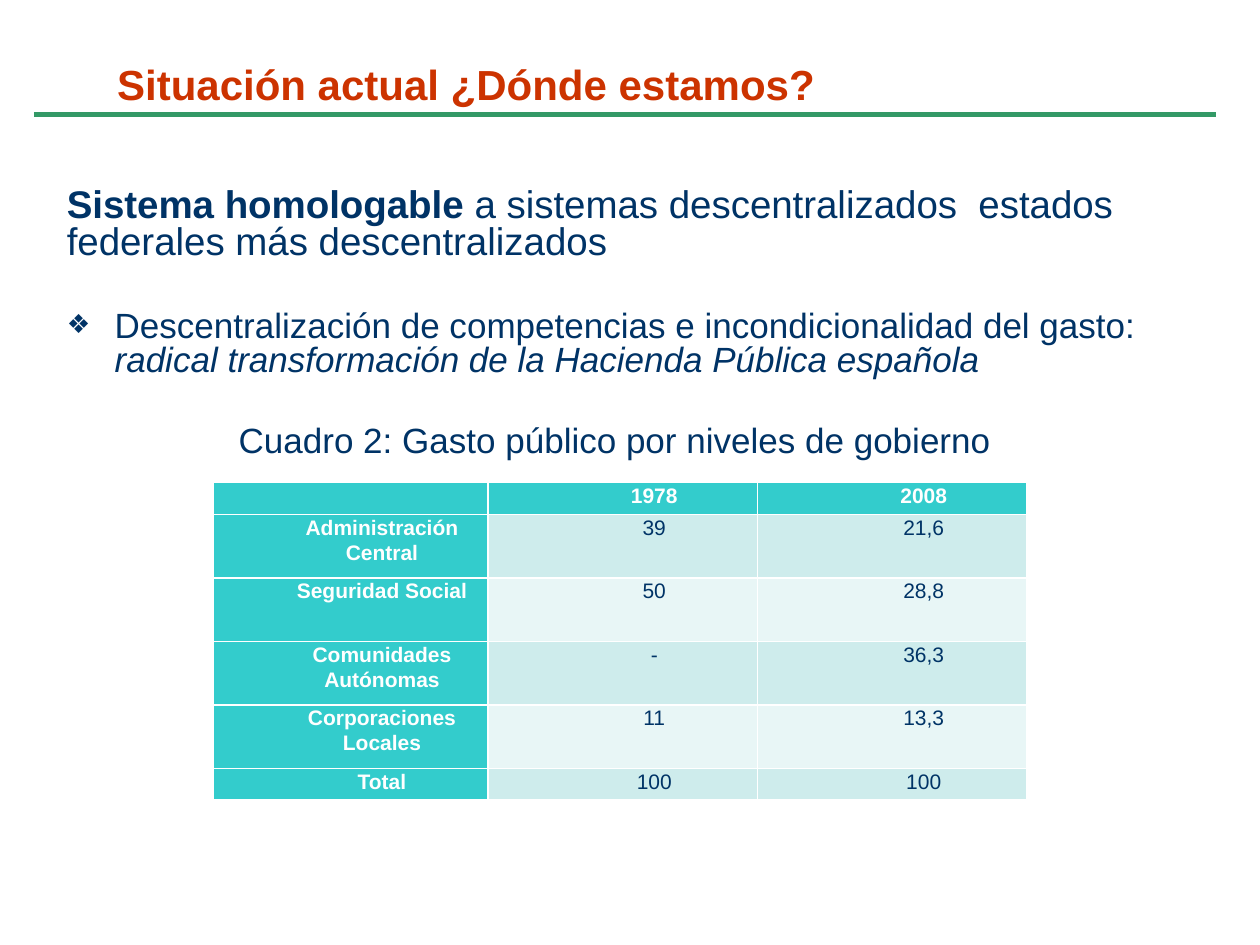
from dataclasses import dataclass

from lxml import etree
from pptx import Presentation
from pptx import util as u
from pptx.dml.color import RGBColor
from pptx.enum import text
from pptx.oxml.ns import qn


@dataclass(frozen=True)
class Theme:
    font: str = "Arial"
    title: str = "CC3300"
    ink: str = "003366"
    rule: str = "339966"
    header: str = "33CCCC"
    bands: tuple = ("CEECEC", "E8F6F6")
    white: str = "FFFFFF"
    title_size: int = 24
    lead_size: int = 22
    body_size: int = 20
    table_size: int = 12


THEME = Theme()

LEAD = [("Sistema homologable ", "bold"),
        ("a sistemas descentralizados  estados federales más descentralizados", "")]
POINT = [("Descentralización de competencias e incondicionalidad del gasto: ", ""),
         ("radical transformación de la Hacienda Pública española", "italic")]
CAPTION = [("Cuadro 2: Gasto público por niveles de gobierno", "")]

SPENDING = [
    ("", "1978", "2008"),
    ("Administración Central", "39", "21,6"),
    ("Seguridad Social", "50", "28,8"),
    ("Comunidades Autónomas", "-", "36,3"),
    ("Corporaciones Locales", "11", "13,3"),
    ("Total", "100", "100"),
]


def inches(*lengths):
    return [u.Inches(length) for length in lengths]


def place(shape, box):
    shape.left, shape.top, shape.width, shape.height = inches(*box)


def style(span, size, color, bold=False, italic=False):
    font = span.font
    font.name, font.size = THEME.font, u.Pt(size)
    font.bold, font.italic = bold, italic
    font.color.rgb = RGBColor.from_string(color)


def indent(para, left, first=0):
    properties = para._p.get_or_add_pPr()
    properties.set("marL", str(u.Inches(left)))
    properties.set("indent", str(u.Inches(first)))
    return properties


def set_bullet(para, mark):
    """Give the paragraph a bullet mark, or none when mark is empty."""
    properties = indent(para, 0.38, -0.38) if mark else indent(para, 0)
    if not mark:
        etree.SubElement(properties, qn("a:buNone"))
        return
    color = etree.SubElement(properties, qn("a:buClr"))
    etree.SubElement(color, qn("a:srgbClr"), val=THEME.ink)
    etree.SubElement(properties, qn("a:buSzPct"), val="75000")
    etree.SubElement(properties, qn("a:buChar"), char=mark)


def add_title(page, box):
    title = page.shapes.title
    place(title, box)
    frame = title.text_frame
    frame.text = "Situación actual ¿Dónde estamos?"
    frame.vertical_anchor = text.MSO_ANCHOR.BOTTOM
    frame.auto_size = text.MSO_AUTO_SIZE.NONE
    para = frame.paragraphs[0]
    para.alignment = text.PP_ALIGN.LEFT
    para.line_spacing = 0.9
    style(para.runs[0], THEME.title_size, THEME.title, bold=True)


def add_rule(page, left, right, y):
    rule = page.shapes.add_connector(1, *inches(left, y, right, y))
    rule.line.color.rgb = RGBColor.from_string(THEME.rule)
    rule.line.width = u.Pt(3)
    etree.SubElement(rule._element.spPr, qn("a:effectLst"))


def add_body(page, box):
    body = page.placeholders[1]
    place(body, box)
    frame = body.text_frame
    frame.auto_size = text.MSO_AUTO_SIZE.NONE
    frame.margin_top = u.Inches(0.51)
    left, center = text.PP_ALIGN.LEFT, text.PP_ALIGN.CENTER
    items = [(LEAD, THEME.lead_size, left, "", 0),
             (POINT, THEME.body_size, left, "❖", 28),
             (CAPTION, THEME.body_size, center, "", 27)]
    for index, (spans, size, alignment, mark, gap) in enumerate(items):
        para = frame.add_paragraph() if index else frame.paragraphs[0]
        para.alignment, para.line_spacing = alignment, 0.8
        para.space_before = u.Pt(gap)
        set_bullet(para, mark)
        for words, look in spans:
            span = para.add_run()
            span.text = words
            style(span, size, THEME.ink, look == "bold", look == "italic")


def fill_cell(cell, words, fill, color, bold):
    cell.fill.solid()
    cell.fill.fore_color.rgb = RGBColor.from_string(fill)
    cell.margin_left = cell.margin_right = u.Inches(0.07)
    cell.margin_top = cell.margin_bottom = 0
    cell.text_frame.text = words
    para = cell.text_frame.paragraphs[0]
    para.alignment, para.line_spacing = text.PP_ALIGN.CENTER, 1.07
    indent(para, 0.5)
    for span in para.runs:
        style(span, THEME.table_size, color, bold)
    if not words:
        etree.SubElement(para._p, qn("a:endParaRPr"), sz=str(THEME.table_size * 100))


def add_spending_table(page, box):
    width, height = box[2:]
    table = page.shapes.add_table(len(SPENDING), 3, *inches(*box)).table
    table.first_col = True
    for column, share in zip(table.columns, (0.338, 0.331, 0.331)):
        column.width = u.Inches(width * share)
    for row, share in zip(table.rows, (1, 2, 2, 2, 2, 1)):
        row.height = u.Inches(height * share / 10)
    for r, values in enumerate(SPENDING):
        for c, words in enumerate(values):
            heading = r == 0 or c == 0
            fill = THEME.header if heading else THEME.bands[(r - 1) % 2]
            color = THEME.white if heading else THEME.ink
            fill_cell(table.cell(r, c), words, fill, color, heading)


def main():
    deck = Presentation()
    deck.slide_width, deck.slide_height = inches(10, 7.5)
    page = deck.slides.add_slide(deck.slide_layouts[1])
    add_rule(page, 0.27, 9.65, 0.91)
    add_title(page, (0.83, 0.13, 8.67, 0.79))
    add_body(page, (0.43, 0.99, 8.9, 6.06))
    add_spending_table(page, (1.69, 3.83, 6.46, 2.52))
    deck.save("out.pptx")


if __name__ == "__main__":
    main()
